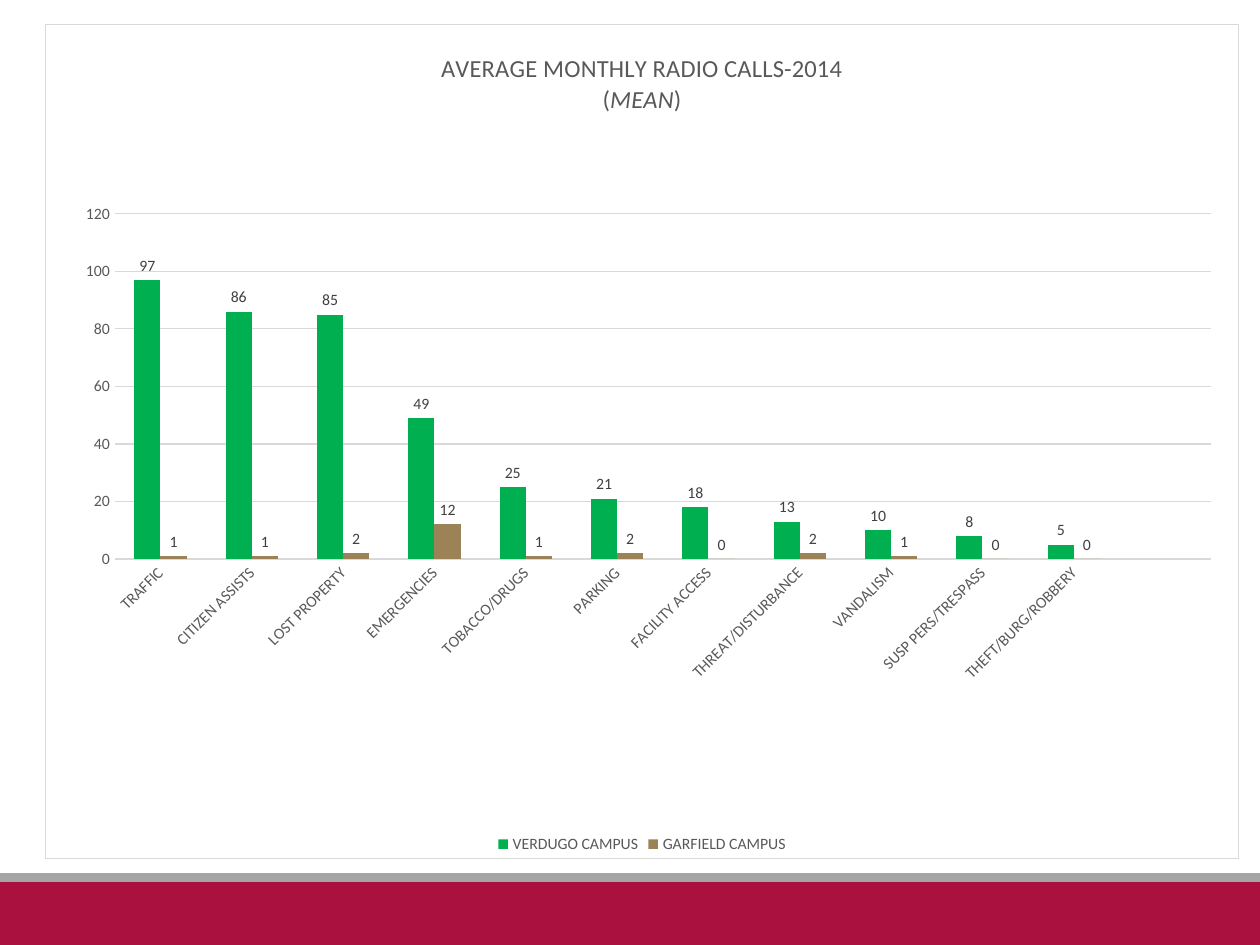
from lxml import etree
from pptx import Presentation
from pptx import chart as charts
from pptx import util as u
from pptx.chart import data as chart_data
from pptx.dml import color
from pptx.enum import chart as kinds
from pptx.enum import shapes
from pptx.oxml import ns, parse_xml

COLORS = {"crimson": "AA113F", "silver": "A5A5A5", "white": "FFFFFF", "rule": "D9D9D9",
          "text": "595959", "label": "404040", "green": "00B050", "tan": "9B8357"}
FONT = "Calibri"
CATEGORIES = ["TRAFFIC", "CITIZEN ASSISTS", "LOST PROPERTY", "EMERGENCIES",
              "TOBACCO/DRUGS", "PARKING", "FACILITY ACCESS", "THREAT/DISTURBANCE",
              "VANDALISM", "SUSP PERS/TRESPASS", "THEFT/BURG/ROBBERY", ""]
CAMPUSES = [
    ("VERDUGO CAMPUS", "green", [97, 86, 85, 49, 25, 21, 18, 13, 10, 8, 5, None]),
    ("GARFIELD CAMPUS", "tan", [1, 1, 2, 12, 1, 2, 0, 2, 1, 0, 0, None]),
]
PLOT = {"x": 0.058, "y": 0.227, "w": 0.919, "h": 0.414}


def px(length):
    return u.Inches(length / 126)


def rgb(name):
    return color.RGBColor.from_string(COLORS[name])


def style_font(font, size=9, ink="text", bold=False, italic=False):
    font.name, font.size = FONT, u.Pt(size)
    font.bold, font.italic = bold, italic
    font.color.rgb = rgb(ink)


def add_text(para, wording, **style):
    span = para.add_run()
    span.text = wording
    style_font(span.font, **style)


class SlideBuilder:
    """Draws bars and column charts on one slide in a shared style."""

    def __init__(self, deck):
        self.slide = deck.slides.add_slide(deck.slide_layouts[6])

    def bar(self, left, top, width, height, fill):
        box = self.slide.shapes.add_shape(
            shapes.MSO_SHAPE.RECTANGLE, *map(px, (left, top, width, height)))
        box.shadow.inherit = False
        box.fill.solid()
        box.fill.fore_color.rgb = rgb(fill)
        box.line.fill.background()

    def column_chart(self, left, top, width, height):
        data = chart_data.CategoryChartData()
        data.categories = CATEGORIES
        for name, _, values in CAMPUSES:
            data.add_series(name, values)
        chart = self.slide.shapes.add_chart(
            kinds.XL_CHART_TYPE.COLUMN_CLUSTERED,
            *map(px, (left, top, width, height)), data).chart
        style_font(chart.font, size=10)
        self.title(chart)
        self.axes(chart)
        self.columns(chart.plots[0])
        chart.has_legend = True
        chart.legend.position = kinds.XL_LEGEND_POSITION.BOTTOM
        chart.legend.include_in_layout = False
        style_font(chart.legend.font)
        self.frame(chart)

    def title(self, chart):
        frame = chart.chart_title.text_frame
        add_text(frame.paragraphs[0], "AVERAGE MONTHLY RADIO CALLS-2014", size=14)
        para = frame.add_paragraph()
        for wording, italic in (("(", False), ("MEAN", True), (")", False)):
            add_text(para, wording, size=14, italic=italic)
        chart.chart_title.include_in_layout = False

    def axes(self, chart):
        for axis in (chart.category_axis, chart.value_axis):
            axis.major_tick_mark = axis.minor_tick_mark = kinds.XL_TICK_MARK.NONE
            style_font(axis.tick_labels.font)
        names, scale = chart.category_axis, chart.value_axis
        names.format.line.color.rgb = rgb("rule")
        names.format.line.width = u.Pt(0.75)
        turn = names._element.find(ns.qn("c:txPr")).find(ns.qn("a:bodyPr"))
        turn.set("rot", "-2700000")
        turn.set("vert", "horz")
        scale.minimum_scale, scale.maximum_scale, scale.major_unit = 0, 120, 20
        scale.format.line.fill.background()
        grid = scale.major_gridlines.format.line
        grid.color.rgb = rgb("rule")
        grid.width = u.Pt(0.75)

    def columns(self, plot):
        plot.gap_width, plot.overlap, plot.vary_by_categories = 150, 0, False
        for series, (_, fill, _) in zip(plot.series, CAMPUSES):
            series.format.fill.solid()
            series.format.fill.fore_color.rgb = rgb(fill)
            labels = series.data_labels
            labels.show_value = True
            labels.position = kinds.XL_LABEL_POSITION.OUTSIDE_END
            style_font(labels.font, ink="label")

    def frame(self, chart):
        space = chart._chartSpace
        area = space.find(ns.qn("c:chart")).find(ns.qn("c:plotArea"))
        for old in area.findall(ns.qn("c:layout")):
            area.remove(old)
        layout = etree.Element(ns.qn("c:layout"))
        manual = etree.SubElement(layout, ns.qn("c:manualLayout"))
        entries = {"layoutTarget": "inner", "xMode": "edge", "yMode": "edge", **PLOT}
        for tag, value in entries.items():
            etree.SubElement(manual, ns.qn(f"c:{tag}")).set("val", str(value))
        area.insert(0, layout)
        space.find(ns.qn("c:chart")).addnext(parse_xml(
            f'<c:spPr {ns.nsdecls("c", "a")}>'
            f'<a:solidFill><a:srgbClr val="{COLORS["white"]}"/></a:solidFill>'
            f'<a:ln w="{u.Pt(0.75)}"><a:solidFill><a:srgbClr val="{COLORS["rule"]}"/>'
            '</a:solidFill></a:ln></c:spPr>'))


def main():
    deck = Presentation()
    deck.slide_width, deck.slide_height = px(1260), px(945)
    builder = SlideBuilder(deck)
    builder.bar(0, 882, 1260, 63, "crimson")
    builder.bar(0, 873, 1260, 9, "silver")
    builder.column_chart(45, 24, 1194, 835)
    deck.save("out.pptx")


if __name__ == "__main__":
    main()
